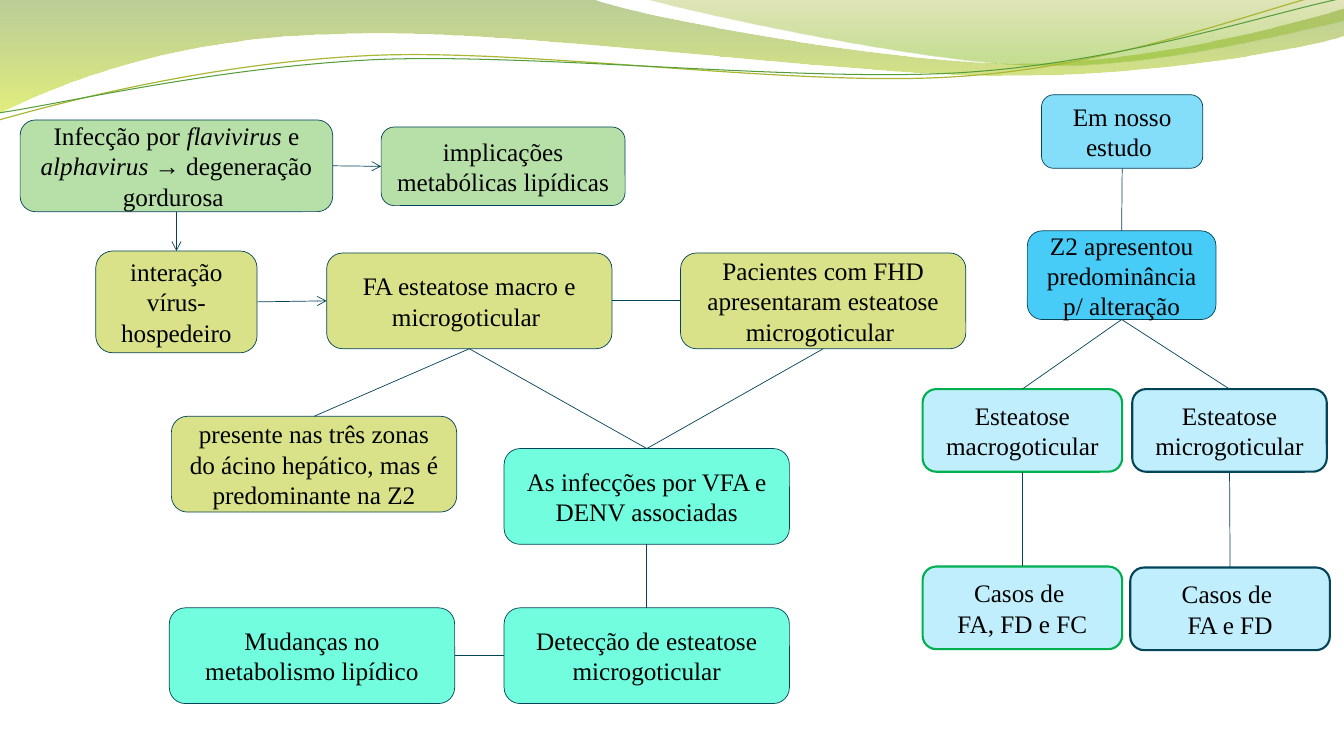
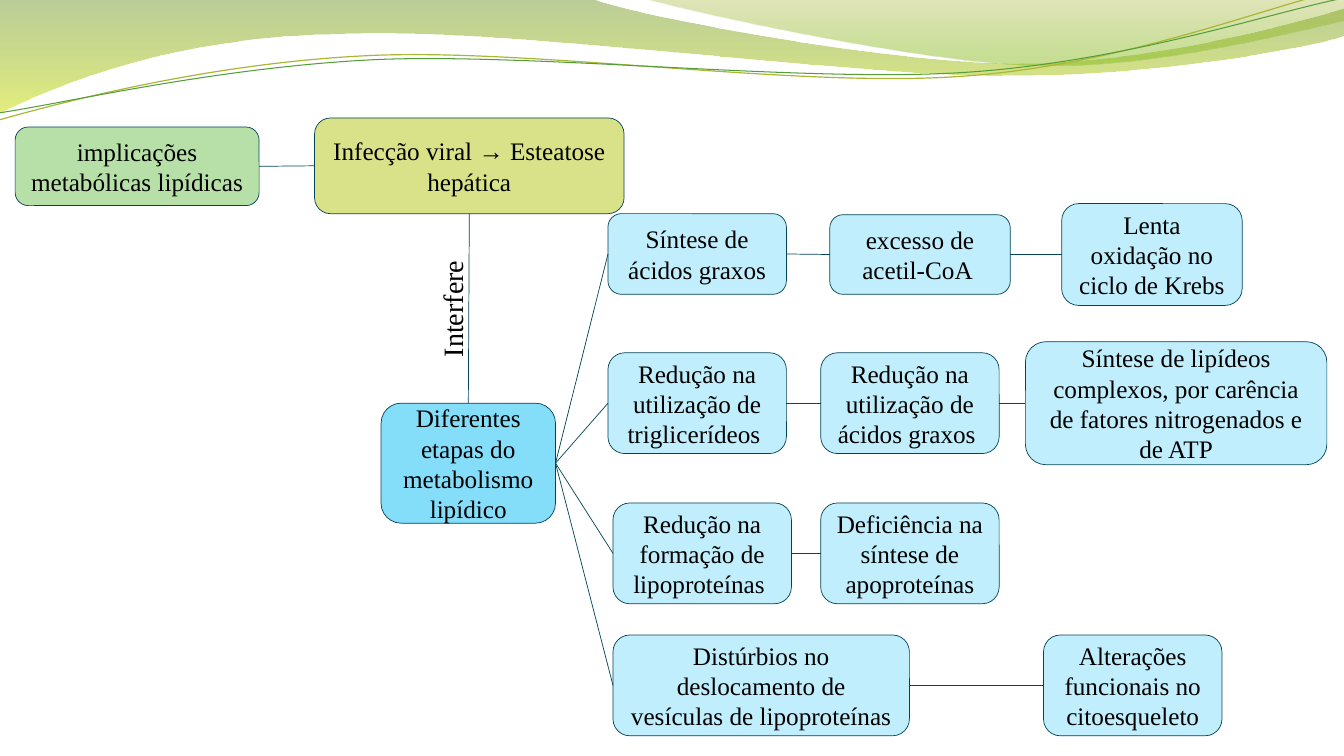
from dataclasses import dataclass

from lxml import etree
from pptx import Presentation
from pptx.dml.color import RGBColor
from pptx.enum.shapes import MSO_CONNECTOR, MSO_SHAPE
from pptx.enum.text import MSO_ANCHOR, MSO_AUTO_SIZE, PP_ALIGN
from pptx.oxml.ns import qn
from pptx.util import Pt

PX = 9144
WIDTH, HEIGHT = 1333, 750
STRAIGHT = MSO_CONNECTOR.STRAIGHT
ROUNDED = MSO_SHAPE.ROUNDED_RECTANGLE
MIDDLE = MSO_ANCHOR.MIDDLE
CENTER = PP_ALIGN.CENTER
GROW = MSO_AUTO_SIZE.SHAPE_TO_FIT_TEXT
TOP, LEFT, BOTTOM, RIGHT = range(4)


@dataclass(frozen=True)
class Theme:
    """Colours, fonts and sizes shared by both slides."""

    ink: str = "000000"
    outline: str = "044458"
    accent: str = "00B050"
    green: str = "B7E0A8"
    olive: str = "D9E289"
    mint: str = "72FDDF"
    pale: str = "C1EEFC"
    sky: str = "84DDF9"
    blue: str = "46CCF6"
    font: str = "Times New Roman"
    arrow_font: str = "Arial"
    body: int = 18
    label: int = 20
    thin: float = 0.5
    thick: float = 1.5
    italics: tuple = ("flavivirus ", "alphavirus ")


T = Theme()

BANDS = [
    ((0, 0),
     [[(587, -1)], [(634, 17), (884, 63), (1011, 63)], [(1137, 63), (1277, 26), (1333, 9)],
      [(1334, 36)], [(1311, 44), (1159, 76), (994, 75)], [(829, 75), (509, 28), (343, 34)],
      [(172, 36), (61, 83), (-2, 113)], [(0, 0)]],
     [(0, "69921C", 45), (1, "CCE10F", 55)]),
    ((638, -1),
     [[(679, 11), (909, 62), (1025, 65)], [(1140, 69), (1282, 32), (1333, 21)], [(1333, 0)],
      [(638, -1)]],
     [(0, "9BAA1A", 30), (0.8, "81BA16", 45)]),
]

WAVES = [
    ((-1, 119),
     [[(63, 101), (210, 62), (369, 55)], [(527, 48), (789, 87), (949, 76)],
      [(1110, 66), (1251, 8), (1330, -10)]],
     "A9B733", 0.85),
    ((-1, 112),
     [[(62, 103), (218, 66), (377, 59)], [(537, 53), (796, 82), (955, 72)],
      [(1114, 62), (1255, 14), (1333, -2)]],
     "549E39", 0.75),
]

INFECTION_BOXES = {
    "implications": (378, 126, 242, 78, T.green, "implicações metabólicas lipídicas"),
    "interaction": (95, 249, 160, 101, T.olive, "interação vírus-hospedeiro"),
    "study": (1033, 94, 160, 73, T.sky, "Em nosso estudo "),
    "infection": (20, 119, 310, 91, T.green,
                  "Infecção por |flavivirus |e |alphavirus |→| degeneração gordurosa "),
    "steatosis": (324, 251, 283, 95, T.olive, "FA esteatose macro e microgoticular "),
    "micro": (1123, 386, 193, 82, T.pale, "Esteatose microgoticular", T.outline, T.thick),
    "macro": (915, 386, 198, 82, T.pale, "Esteatose macrogoticular", T.accent, T.thick),
    "zone2": (1019, 229, 187, 88, T.blue, "Z2 apresentou predominância p/ alteração"),
    "zones": (170, 413, 283, 95, T.olive,
              "presente nas três zonas do ácino hepático, mas é predominante na Z2"),
    "patients": (675, 251, 283, 95, T.olive,
                 "Pacientes com FHD apresentaram esteatose microgoticular "),
    "associated": (500, 445, 283, 95, T.mint, "As infecções por VFA e DENV associadas"),
    "detection": (500, 603, 283, 95, T.mint, "Detecção de esteatose microgoticular"),
    "changes": (168, 603, 283, 95, T.mint, "Mudanças no metabolismo lipídico"),
    "macro_cases": (915, 562, 198, 82, T.pale, "Casos de \nFA, FD e FC", T.accent, T.thick),
    "micro_cases": (1121, 563, 198, 82, T.pale, "Casos de \nFA e FD", T.outline, T.thick),
}

INFECTION_LINKS = [
    ("infection", RIGHT, "implications", LEFT, True),
    ("infection", BOTTOM, "interaction", TOP, True),
    ("interaction", RIGHT, "steatosis", LEFT, True),
    ("steatosis", RIGHT, "patients", LEFT),
    ("zones", TOP, "steatosis", BOTTOM),
    ("associated", TOP, "steatosis", BOTTOM),
    ("associated", TOP, "patients", BOTTOM),
    ("associated", BOTTOM, "detection", TOP),
    ("detection", LEFT, "changes", RIGHT),
    ("zone2", TOP, "study", BOTTOM),
    ("zone2", BOTTOM, "macro", TOP),
    ("zone2", BOTTOM, "micro", TOP),
    ("macro", BOTTOM, "macro_cases", TOP),
    ("micro", BOTTOM, "micro_cases", TOP),
]

METABOLISM_BOXES = {
    "implications": (15, 126, 242, 78, T.green, "implicações metabólicas lipídicas"),
    "stages": (378, 400, 173, 119, T.sky, "Diferentes etapas do\vmetabolismo lipídico"),
    "transport": (608, 630, 294, 100, T.pale,
                  "Distúrbios no deslocamento de vesículas de lipoproteínas"),
    "synthesis": (603, 212, 177, 80, T.pale, "Síntese de ácidos graxos"),
    "viral": (312, 117, 307, 95, T.olive, "Infecção viral → Esteatose hepática"),
    "excess": (823, 213, 179, 79, T.pale, "excesso de acetil-CoA "),
    "krebs": (1053, 202, 179, 101, T.pale, "Lenta oxidação no ciclo de Krebs"),
    "triglycerides": (603, 350, 177, 100, T.pale, "Redução na utilização de triglicerídeos "),
    "fatty_acids": (814, 350, 177, 100, T.pale, "Redução na utilização de ácidos graxos "),
    "complex_lipids": (1017, 339, 299, 122, T.pale,
                       "Síntese de lipídeos complexos, por carência de fatores nitrogenados e de ATP"),
    "lipoproteins": (608, 499, 177, 100, T.pale, "Redução na formação de lipoproteínas "),
    "apoproteins": (814, 499, 177, 100, T.pale, "Deficiência na síntese de apoproteínas"),
    "cytoskeleton": (1035, 630, 177, 100, T.pale, "Alterações funcionais no citoesqueleto"),
}

METABOLISM_LINKS = [
    ("viral", LEFT, "implications", RIGHT),
    ("stages", TOP, "viral", BOTTOM),
    ("stages", RIGHT, "synthesis", LEFT),
    ("stages", RIGHT, "triglycerides", LEFT),
    ("stages", RIGHT, "lipoproteins", LEFT),
    ("stages", RIGHT, "transport", LEFT),
    ("synthesis", RIGHT, "excess", LEFT),
    ("excess", RIGHT, "krebs", LEFT),
    ("triglycerides", RIGHT, "fatty_acids", LEFT),
    ("fatty_acids", RIGHT, "complex_lipids", LEFT),
    ("lipoproteins", RIGHT, "apoproteins", LEFT),
    ("transport", RIGHT, "cytoskeleton", LEFT),
]


def px(*values):
    """Turn px lengths into a list of EMU lengths."""
    return [v * PX for v in values]


def set_line(line, color, width):
    """Give a line its colour and width in points."""
    line.color.rgb = RGBColor.from_string(color)
    line.width = Pt(width)


def write(tf, text, size):
    """Write centred paragraphs, with | between differently styled runs."""
    tf.word_wrap = True
    for i, line in enumerate(text.split("\n")):
        p = tf.add_paragraph() if i else tf.paragraphs[0]
        p.alignment = CENTER
        pieces = line.split("|")
        p.text = pieces[0]
        for piece in pieces[1:]:
            p.add_run().text = piece
        for r in p.runs:
            r.font.size = Pt(size)
            r.font.name = T.arrow_font if r.text == "→" else T.font
            r.font.italic = r.text in T.italics
            r.font.color.rgb = RGBColor.from_string(T.ink)


def add_box(s, x, y, w, h, fill, text, outline=T.outline, width=T.thin):
    """Add a rounded box with centred text."""
    sp = s.shapes.add_shape(ROUNDED, *px(x, y, w, h))
    sp.shadow.inherit = False
    sp.fill.solid()
    sp.fill.fore_color.rgb = RGBColor.from_string(fill)
    set_line(sp.line, outline, width)
    sp.text_frame.vertical_anchor = MIDDLE
    write(sp.text_frame, text, T.body)
    return sp


def add_link(s, start, start_side, end, end_side, arrow=False):
    """Join the sides of two boxes with a straight connector."""
    c = s.shapes.add_connector(STRAIGHT, 0, 0, 0, 0)
    c.begin_connect(start, start_side)
    c.end_connect(end, end_side)
    set_line(c.line, T.outline, T.thin)
    props = c.element.spPr
    if arrow:
        etree.SubElement(props.find(qn("a:ln")), qn("a:tailEnd"), type="arrow")
    etree.SubElement(props, qn("a:effectLst"))


def add_diagram(s, boxes, links):
    """Draw the boxes and the links between them."""
    shapes = {name: add_box(s, *box) for name, box in boxes.items()}
    for start, start_side, end, end_side, *arrow in links:
        add_link(s, shapes[start], start_side, shapes[end], end_side, *arrow)


def add_vertical_label(s, x, y, w, h, text):
    """Add a text box that reads upwards."""
    sp = s.shapes.add_textbox(*px(x, y, w, h))
    sp.rotation = 270
    write(sp.text_frame, text, T.label)
    sp.text_frame.auto_size = GROW


def add_outline(s, start, segments, close):
    """Add a freeform whose three-point segments are cubic curves."""
    builder = s.shapes.build_freeform(*px(*start))
    builder.add_line_segments([px(*point) for seg in segments for point in seg], close=close)
    sp = builder.convert_to_shape()
    sp.shadow.inherit = False
    steps = iter(list(sp.element.iter(qn("a:lnTo"))))
    for segment in segments:
        group = [next(steps) for _ in segment]
        if len(group) == 3:
            curve = etree.Element(qn("a:cubicBezTo"))
            group[0].addprevious(curve)
            for step in group:
                curve.append(step[0])
                step.getparent().remove(step)
    return sp


def add_band(s, start, segments, stops):
    """Add a translucent band shaded from top to bottom."""
    sp = add_outline(s, start, segments, True)
    sp.line.fill.background()
    sp.fill.gradient()
    sp.fill.gradient_angle = 270
    for stop, (position, color, _) in zip(sp.fill.gradient_stops, stops):
        stop.position = position
        stop.color.rgb = RGBColor.from_string(color)
    for node, (_, _, alpha) in zip(sp.element.iter(qn("a:srgbClr")), stops):
        etree.SubElement(node, qn("a:alpha"), val=str(alpha * 1000))
    return sp


def add_wave(s, start, segments, color, width):
    """Add a thin open curve."""
    sp = add_outline(s, start, segments, False)
    sp.fill.background()
    set_line(sp.line, color, width)
    return sp


def decorate_layout(s):
    """Replace the placeholders of the slide's layout by the bands and waves."""
    layout = s.slide_layout
    for placeholder in list(layout.placeholders):
        layout.shapes.element.remove(placeholder.element)
    parts = [add_band(s, *band) for band in BANDS] + [add_wave(s, *wave) for wave in WAVES]
    for part in parts:
        layout.shapes.element.append(part.element)


def main():
    """Build both slides and save them."""
    prs = Presentation()
    prs.slide_width, prs.slide_height = px(WIDTH, HEIGHT)
    blank = prs.slide_layouts[6]

    s = prs.slides.add_slide(blank)
    decorate_layout(s)
    add_diagram(s, INFECTION_BOXES, INFECTION_LINKS)

    s = prs.slides.add_slide(blank)
    add_diagram(s, METABOLISM_BOXES, METABOLISM_LINKS)
    add_vertical_label(s, 378, 281, 141, 44, "Interfere ")

    prs.save("out.pptx")


if __name__ == "__main__":
    main()
